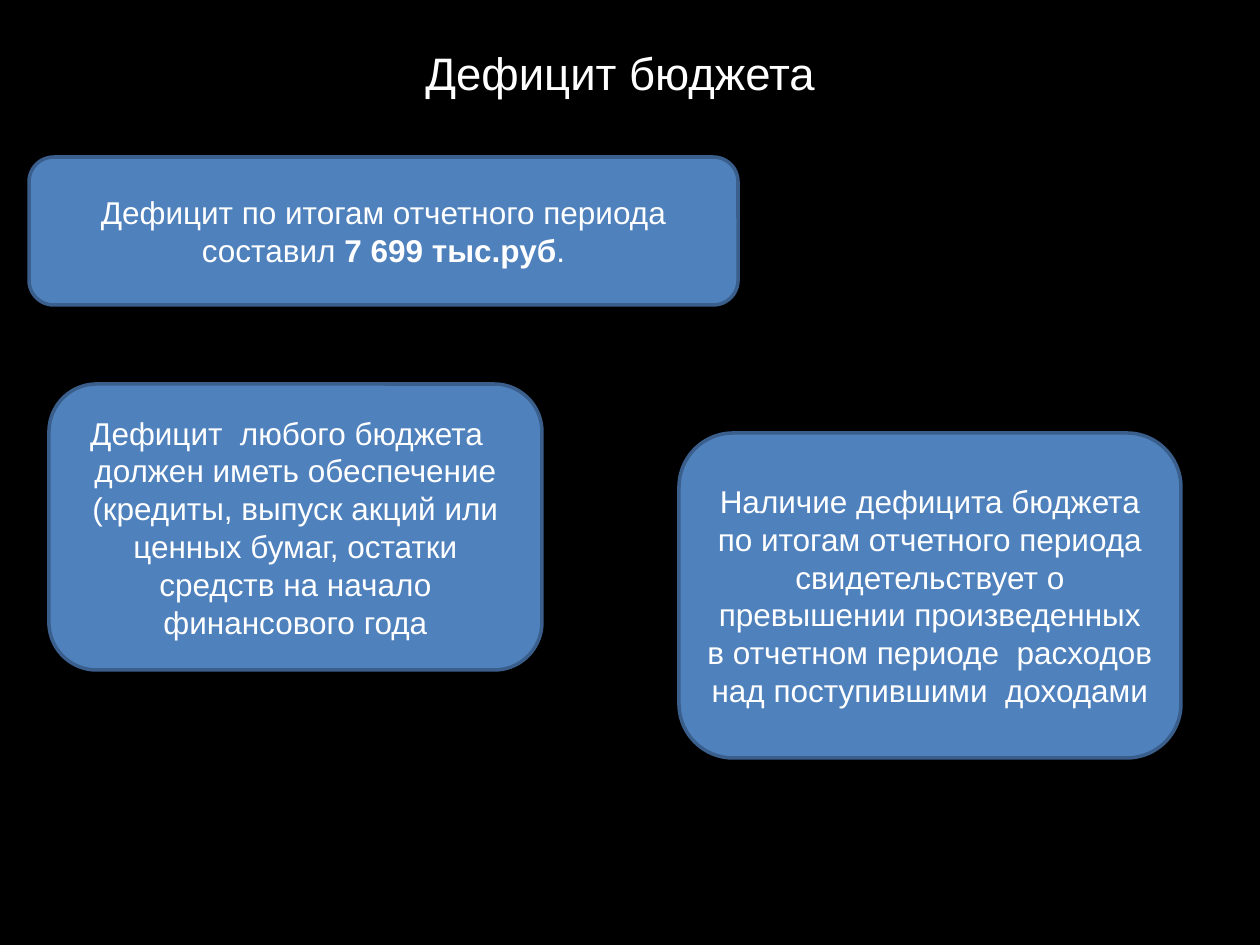
import pptx
import pptx.util
import pptx.dml.color
import pptx.enum.shapes
import pptx.enum.text

PX = pptx.util.Inches(1) / 126
BLACK = pptx.dml.color.RGBColor(0x00, 0x00, 0x00)
WHITE = pptx.dml.color.RGBColor(0xFF, 0xFF, 0xFF)
BLUE = pptx.dml.color.RGBColor(0x4F, 0x81, 0xBD)
BORDER = pptx.dml.color.RGBColor(0x3A, 0x5F, 0x8C)


def px(n):
    return pptx.util.Emu(round(n * PX))


def add_run(p, text, size, bold=False):
    r = p.add_run()
    r.text = text
    r.font.name = "Arial"
    r.font.size = pptx.util.Pt(size)
    r.font.bold = bold
    r.font.color.rgb = WHITE


def add_title(s, box, text):
    sp = s.shapes.add_textbox(*map(px, box))
    tf = sp.text_frame
    tf.word_wrap = True
    tf.auto_size = pptx.enum.text.MSO_AUTO_SIZE.SHAPE_TO_FIT_TEXT
    add_run(tf.paragraphs[0], text, 26)


def add_card(s, box, runs):
    sp = s.shapes.add_shape(
        pptx.enum.shapes.MSO_SHAPE.ROUNDED_RECTANGLE, *map(px, box))
    sp.shadow.inherit = False
    sp.fill.solid()
    sp.fill.fore_color.rgb = BLUE
    sp.line.color.rgb = BORDER
    sp.line.width = pptx.util.Pt(2)
    tf = sp.text_frame
    tf.word_wrap = True
    tf.vertical_anchor = pptx.enum.text.MSO_ANCHOR.MIDDLE
    p = tf.paragraphs[0]
    p.alignment = pptx.enum.text.PP_ALIGN.CENTER
    for text, bold in runs:
        add_run(p, text, 18, bold)


def main():
    prs = pptx.Presentation()
    prs.slide_width, prs.slide_height = px(1260), px(945)
    s = prs.slides.add_slide(prs.slide_layouts[6])
    s.background.fill.solid()
    s.background.fill.fore_color.rgb = BLACK

    add_title(s, (413, 39, 493, 68), "Дефицит бюджета")
    add_card(s, (29, 157, 709, 148), [
        ("Дефицит по итогам отчетного периода составил ", False),
        ("7 699 тыс.руб", True),
        (".", False),
    ])
    add_card(s, (679, 433, 502, 325), [
        ("Наличие дефицита бюджета по итогам отчетного периода "
         "свидетельствует о превышении произведенных в отчетном периоде  "
         "расходов над поступившими  доходами", False),
    ])
    add_card(s, (49, 384, 493, 286), [
        ("Дефицит  любого бюджета   должен иметь обеспечение (кредиты, "
         "выпуск акций или ценных бумаг, остатки средств на начало "
         "финансового года", False),
    ])
    prs.save("out.pptx")


if __name__ == "__main__":
    main()
